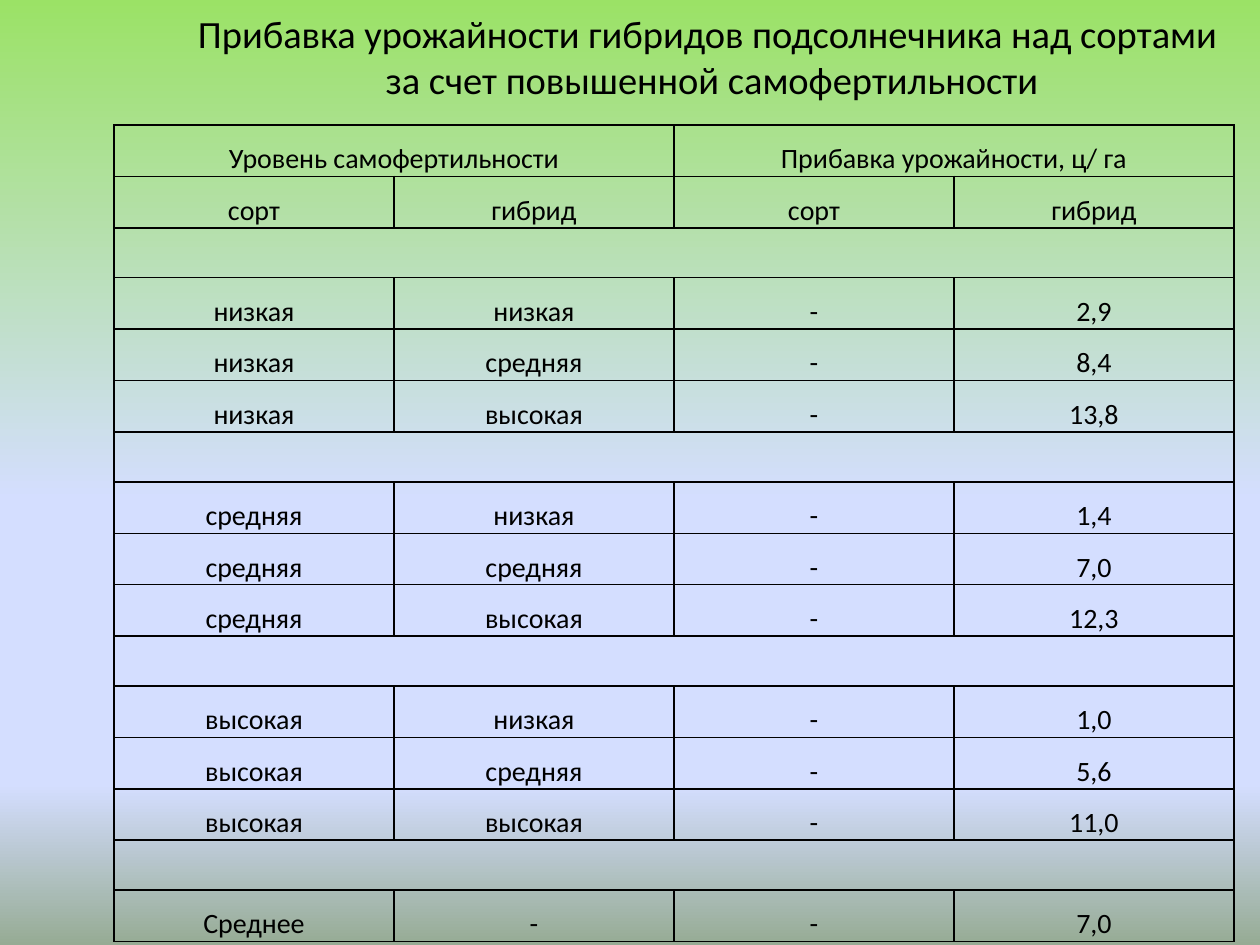
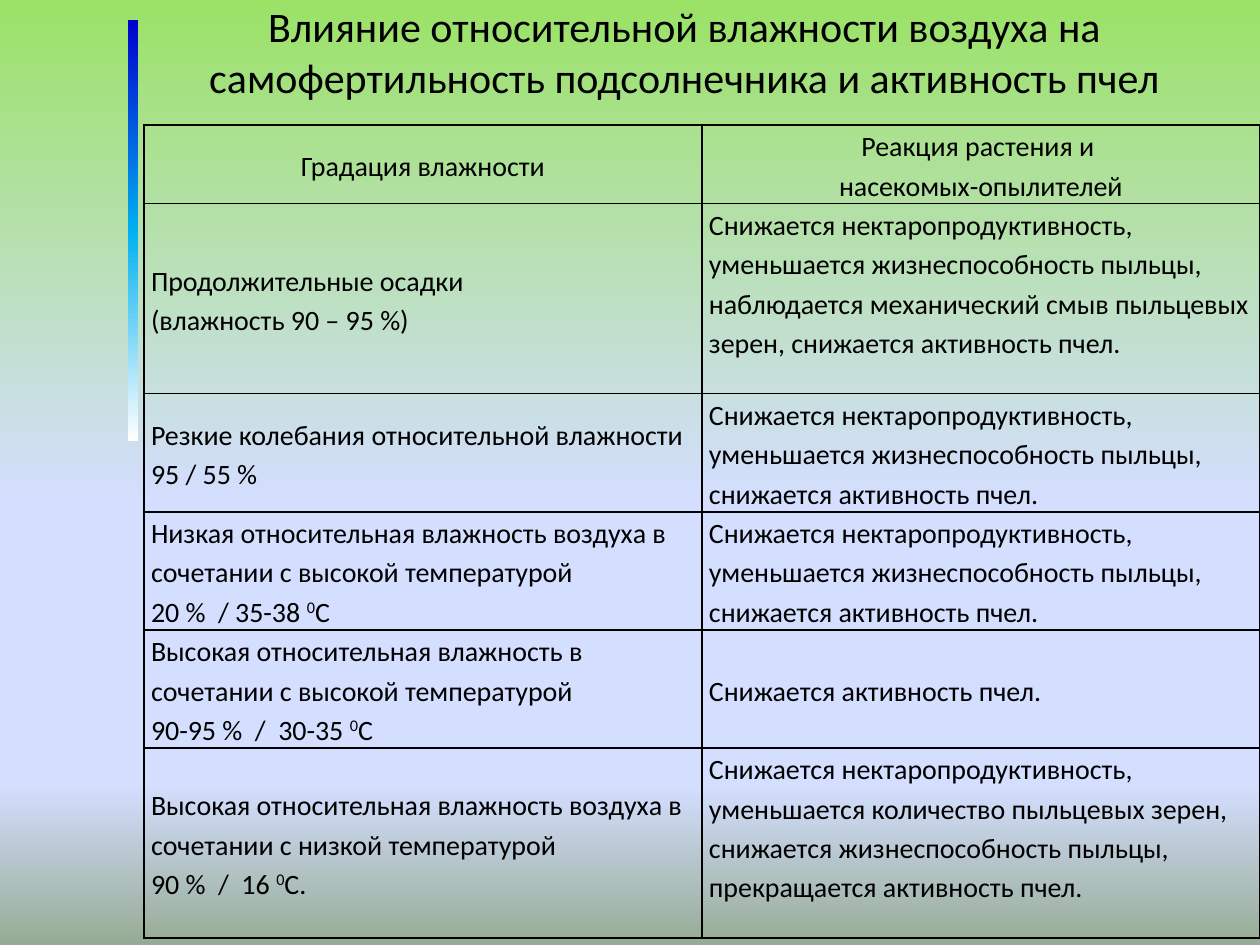
import lxml.etree
import pptx
import pptx.dml.color
import pptx.enum.shapes
import pptx.enum.text
import pptx.oxml.ns
import pptx.util

UNIT = 914400 / 126
ALIGN = pptx.enum.text.PP_ALIGN
ANCHOR = pptx.enum.text.MSO_ANCHOR
tag = pptx.oxml.ns.qn


def px(count):
    return pptx.util.Emu(round(count * UNIT))


def hue(code):
    return pptx.dml.color.RGBColor.from_string(code)


def paint(parent, code):
    lxml.etree.SubElement(parent, tag("a:srgbClr"), val=str(hue(code)))


def shade(fill, node, stops):
    """Vertical gradient from (percent, colour) stops."""
    fill.gradient()
    fill.gradient_angle = 270
    ramp = next(node.iter(tag("a:gsLst")))
    for old in list(ramp):
        ramp.remove(old)
    for spot, code in stops:
        paint(lxml.etree.SubElement(ramp, tag("a:gs"), pos=str(spot * 1000)), code)


def write(frame, text, font="Calibri", size=16, color="000000",
          align=ALIGN.CENTER, space=None):
    """One paragraph per line; the character after ^ is raised."""
    for row, line in enumerate(text.split("\n")):
        para = frame.paragraphs[0] if row == 0 else frame.add_paragraph()
        para.alignment = align
        if space:
            para.line_spacing = space
        head, *tails = line.split("^")
        parts = [(head, False)]
        for tail in tails:
            parts += [(tail[0], True), (tail[1:], False)]
        for words, raised in parts:
            if not words:
                continue
            run = para.add_run()
            run.text = words
            run.font.name = font
            run.font.size = pptx.util.Pt(size)
            run.font.color.rgb = hue(color)
            if raised:
                run.font._element.set("baseline", "30000")


class Deck:
    line = "000000"
    sky = [(0, "9BE266"), (53, "D4DEFF"), (83, "D4DEFF"), (100, "96AB94")]

    def __init__(self):
        self.file = pptx.Presentation()
        self.file.slide_width, self.file.slide_height = px(1260), px(945)
        master = self.file.slide_master
        shade(master.background.fill, master._element, self.sky)

    def start(self):
        self.slide = self.file.slides.add_slide(self.file.slide_layouts[5])

    def place(self, shape, box):
        shape.left, shape.top, shape.width, shape.height = map(px, box)

    def title(self, text, box, size):
        shape = self.slide.shapes.title
        self.place(shape, box)
        frame = shape.text_frame
        frame.auto_size = pptx.enum.text.MSO_AUTO_SIZE.NONE
        frame.vertical_anchor = ANCHOR.MIDDLE
        write(frame, text, size=size)

    def bar(self, box, stops):
        kind = pptx.enum.shapes.MSO_SHAPE.RECTANGLE
        shape = self.slide.shapes.add_shape(kind, *map(px, box))
        shape.shadow.inherit = False
        shape.line.fill.background()
        shade(shape.fill, shape._element, stops)

    def grid(self, left, top, wide, rows, cols):
        """Plain table: cell width, row heights, column count."""
        table = self.slide.shapes.add_table(
            len(rows), cols, px(left), px(top), px(wide * cols), px(sum(rows))).table
        table.first_row = table.horz_banding = False
        for col in table.columns:
            col.width = px(wide)
        for row, high in zip(table.rows, rows):
            row.height = px(high)
        for cell in table.iter_cells():
            self.frame(cell)
        return table

    def frame(self, cell):
        cell.fill.background()
        cell.margin_left = cell.margin_right = px(7)
        cell.margin_top = cell.margin_bottom = 0
        cell.vertical_anchor = ANCHOR.MIDDLE
        props = cell._tc.get_or_add_tcPr()
        for spot, side in enumerate(("lnL", "lnR", "lnT", "lnB")):
            edge = lxml.etree.Element(tag("a:" + side), w="12700")
            paint(lxml.etree.SubElement(edge, tag("a:solidFill")), self.line)
            props.insert(spot, edge)


def gain(deck):
    deck.start()
    deck.title("Прибавка урожайности гибридов подсолнечника над сортами \n"
               "за счет повышенной самофертильности", (164, 2, 1096, 108), 22)
    # Levels of variety and hybrid, three by three
    levels = ["низкая", "средняя", "высокая"]
    yields = [["2,9", "8,4", "13,8"], ["1,4", "7,0", "12,3"], ["1,0", "5,6", "11,0"]]
    rows = [["Уровень самофертильности", "", "Прибавка урожайности, ц/ га", ""],
            ["сорт", "гибрид"] * 2, []]
    for sort, group in zip(levels, yields):
        rows += [[sort, hybrid, "-", value] for hybrid, value in zip(levels, group)]
        rows.append([])
    rows.append(["Среднее", "-", "-", "7,0"])
    # Table with merged headings and divider rows
    table = deck.grid(114, 125, 280, [50] * len(rows), 4)
    for col in (0, 2):
        table.cell(0, col).merge(table.cell(0, col + 1))
    for row, words in enumerate(rows):
        if not words:
            table.cell(row, 0).merge(table.cell(row, 3))
        for col, word in enumerate(words):
            if word:
                write(table.cell(row, col).text_frame, word, space=1.5)


def humid(deck):
    deck.start()
    deck.bar((128, 20, 10, 421), [(0, "0000CC"), (50, "00B0F0"), (100, "FFFFFF")])
    deck.title("Влияние относительной влажности воздуха на самофертильность "
               "подсолнечника и активность пчел", (134, 0, 1101, 102), 24)
    # Humidity grades and responses
    less = "Снижается нектаропродуктивность, "
    weak = less + "уменьшается жизнеспособность пыльцы, "
    calm = "снижается активность пчел."
    rows = [
        ("Градация влажности", "Реакция растения и \nнасекомых-опылителей"),
        ("Продолжительные осадки\n(влажность 90 – 95 %)",
         weak + "наблюдается механический смыв пыльцевых зерен, " + calm),
        ("Резкие колебания относительной влажности  95 / 55 %", weak + calm),
        ("Низкая относительная влажность воздуха в сочетании с высокой температурой\n"
         "20 %  / 35-38 ^0С", weak + calm),
        ("Высокая относительная влажность в сочетании с высокой температурой\n"
         "90-95 %  /  30-35 ^0С", calm.capitalize()),
        ("Высокая относительная влажность воздуха в сочетании с низкой температурой\n"
         "90 %  /  16 ^0С.",
         less + "уменьшается количество пыльцевых зерен, "
         "снижается жизнеспособность пыльцы, прекращается активность пчел."),
    ]
    table = deck.grid(144, 125, 558, [78, 190, 116, 116, 116, 190], 2)
    for row, words in enumerate(rows):
        for col, word in enumerate(words):
            cell = table.cell(row, col)
            if col == 1 and row != 4:
                cell.vertical_anchor = ANCHOR.TOP
            write(cell.text_frame, word, space=1.15,
                  align=ALIGN.LEFT if row else ALIGN.CENTER)


def main():
    deck = Deck()
    gain(deck)
    humid(deck)
    deck.file.save("out.pptx")


if __name__ == "__main__":
    main()
